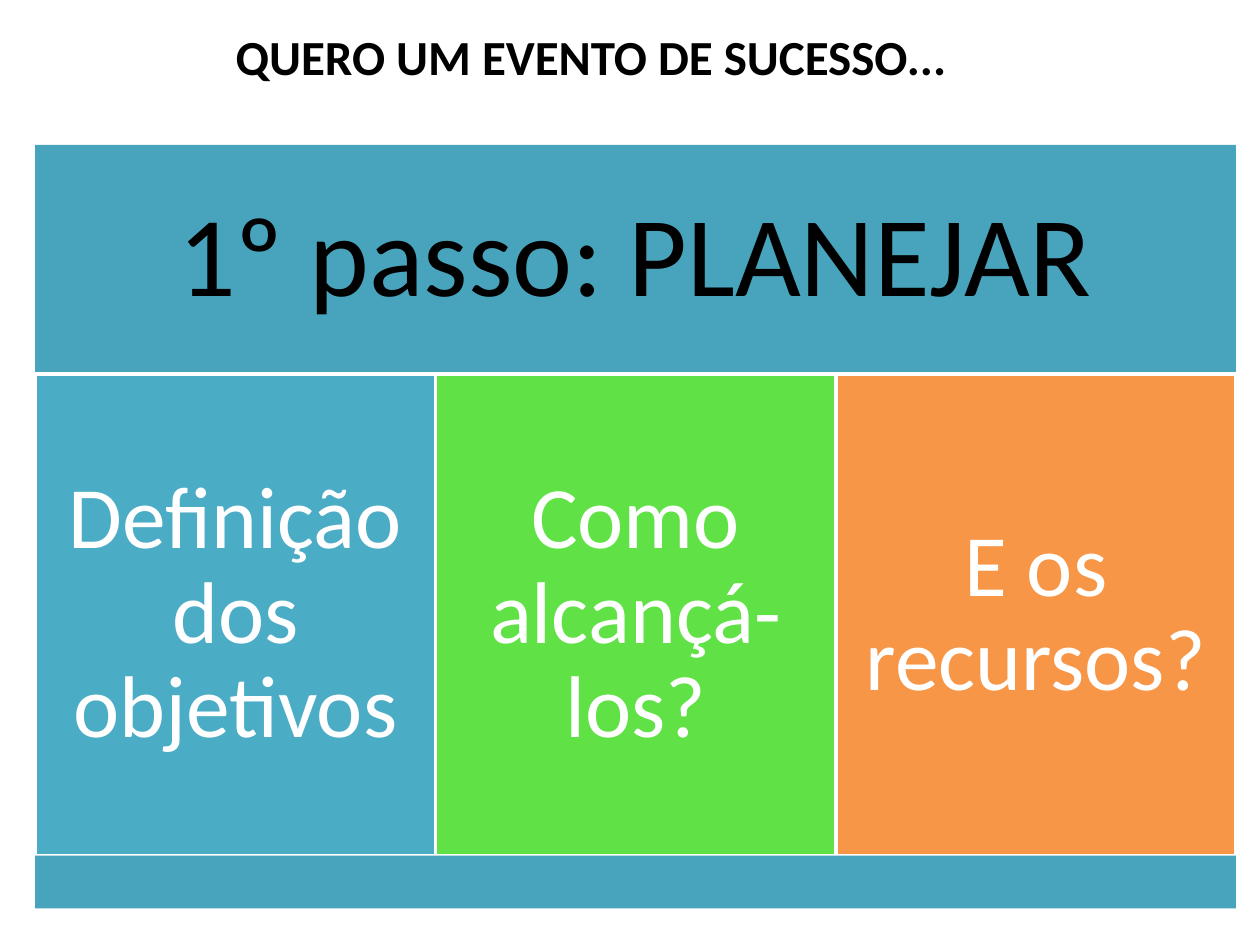
from pptx import Presentation
from pptx.dml.color import RGBColor
from pptx.enum.shapes import MSO_SHAPE as Shape
from pptx.enum.text import MSO_ANCHOR as Anchor, PP_ALIGN as Align
from pptx.util import Inches, Pt

BLACK = RGBColor(0x00, 0x00, 0x00)
WHITE = RGBColor(0xFF, 0xFF, 0xFF)
TEAL = RGBColor(0x48, 0xA4, 0xBD)
BLUE = RGBColor(0x4B, 0xAC, 0xC6)
GREEN = RGBColor(0x60, 0xE1, 0x46)
ORANGE = RGBColor(0xF7, 0x96, 0x46)

LEFT, WIDTH = 0.28, 9.53
TOP, MID, BASE, END = 1.15, 2.97, 6.79, 7.21
CARDS = [
    ("Definição dos objetivos", BLUE),
    ("Como alcançá-los?", GREEN),
    ("E os recursos?", ORANGE),
]


def set_text(frame, text, size, color, align, bold=False):
    frame.text = text
    frame.word_wrap = True
    frame.vertical_anchor = Anchor.MIDDLE
    para = frame.paragraphs[0]
    para.alignment = align
    font = para.runs[0].font
    font.name, font.size, font.bold = "Calibri", Pt(size), bold
    font.color.rgb = color


def add_title(slide, text):
    title = slide.shapes.title
    title.left, title.top = Inches(1.77), Inches(-0.03)
    title.width, title.height = Inches(6.3), Inches(0.94)
    set_text(title.text_frame, text, 28, BLACK, Align.JUSTIFY, True)


def add_block(slide, left, top, width, height, fill, edge=None):
    block = slide.shapes.add_shape(
        Shape.RECTANGLE, Inches(left), Inches(top), Inches(width), Inches(height))
    block.shadow.inherit = False
    block.fill.solid()
    block.fill.fore_color.rgb = fill
    if edge is None:
        block.line.fill.background()
    else:
        block.line.color.rgb = edge
        block.line.width = Pt(2)
    return block


def label(block, text, size, color, inset):
    frame = block.text_frame
    frame.margin_left = frame.margin_right = Inches(inset)
    frame.margin_top = frame.margin_bottom = Inches(inset)
    set_text(frame, text, size, color, Align.CENTER)
    frame.paragraphs[0].line_spacing = 0.9


def main():
    deck = Presentation()
    deck.slide_width, deck.slide_height = Inches(10), Inches(7.5)
    slide = deck.slides.add_slide(deck.slide_layouts[5])
    add_title(slide, "QUERO UM EVENTO DE SUCESSO...")

    # Header band
    head = add_block(slide, LEFT, TOP, WIDTH, MID - TOP, TEAL)
    label(head, "1º passo: PLANEJAR", 65, BLACK, 0.27)

    # Three equal cards
    step = WIDTH / len(CARDS)
    for i, (text, fill) in enumerate(CARDS):
        card = add_block(slide, LEFT + i * step, MID, step, BASE - MID, fill, WHITE)
        label(card, text, 50, WHITE, 0.21)

    # Bottom band
    add_block(slide, LEFT, BASE, WIDTH, END - BASE, TEAL)
    deck.save("out.pptx")


if __name__ == "__main__":
    main()
